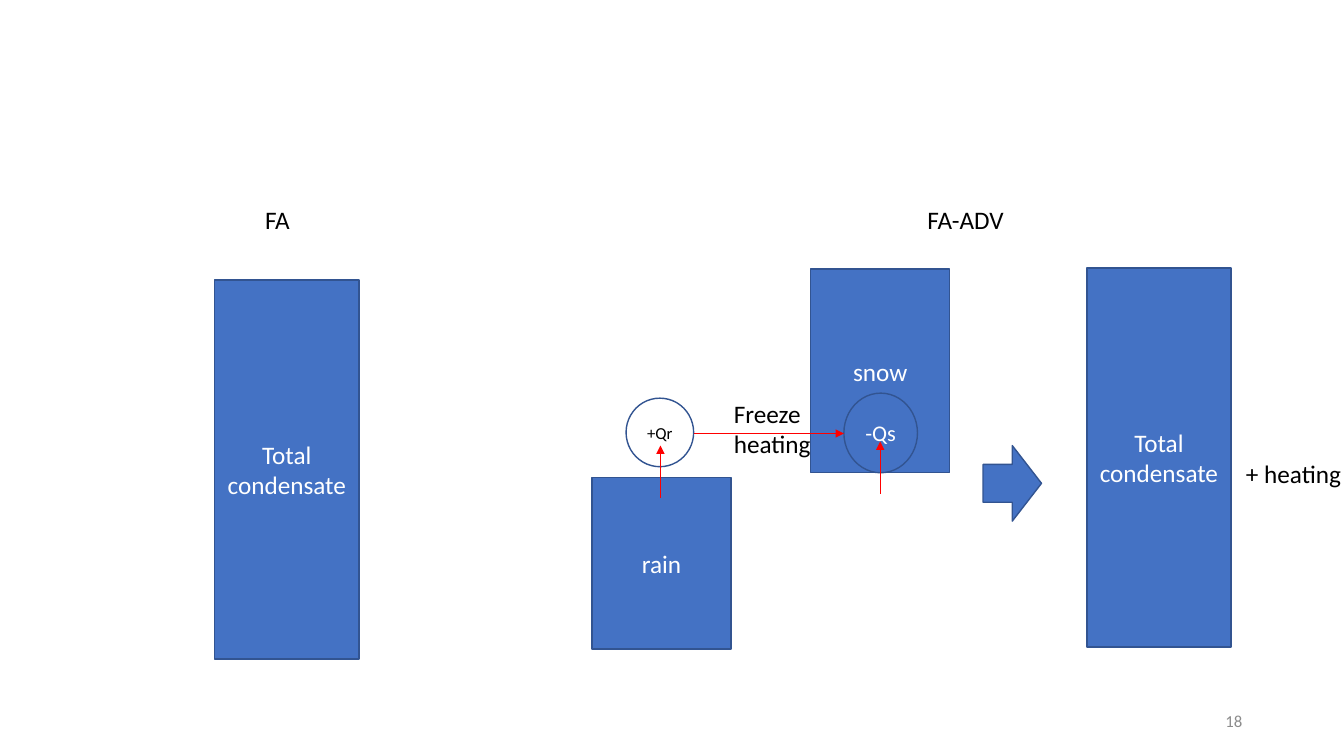
"""Build the slide comparing the FA and FA-ADV condensate schemes."""
from dataclasses import dataclass

from lxml import etree
from pptx import Presentation
from pptx.dml.color import RGBColor
from pptx.enum.shapes import MSO_CONNECTOR, MSO_SHAPE
from pptx.enum.text import MSO_ANCHOR, PP_ALIGN
from pptx.oxml.ns import qn
from pptx.slide import Slide
from pptx.text.text import TextFrame
from pptx.util import Pt

PX = 9144
SLIDE_WIDTH, SLIDE_HEIGHT = 1333, 750
FONT = "Calibri"
COLORS = {
    "block": "4472C4",
    "outline": "325491",
    "arrow": "FF0000",
    "white": "FFFFFF",
    "black": "000000",
    "grey": "8C8C8C",
}
RECTANGLE = MSO_SHAPE.RECTANGLE
OVAL = MSO_SHAPE.OVAL
RIGHT_ARROW = MSO_SHAPE.RIGHT_ARROW
STRAIGHT = MSO_CONNECTOR.STRAIGHT
LEFT, CENTER, RIGHT = PP_ALIGN.LEFT, PP_ALIGN.CENTER, PP_ALIGN.RIGHT
TOP, MIDDLE = MSO_ANCHOR.TOP, MSO_ANCHOR.MIDDLE


@dataclass(frozen=True)
class Block:
    """An outlined shape with centred text."""

    kind: MSO_SHAPE
    left: int
    top: int
    width: int
    height: int
    text: str = ""
    size: int = 18
    color: str = "white"
    fill: str | None = "block"


@dataclass(frozen=True)
class Arrow:
    """A thin arrow between two points."""

    start_x: int
    start_y: int
    end_x: int
    end_y: int


@dataclass(frozen=True)
class Label:
    """Free-standing text."""

    left: int
    top: int
    width: int
    height: int
    text: str
    size: int = 18
    color: str = "black"
    align: PP_ALIGN = LEFT
    anchor: MSO_ANCHOR = TOP
    wrap: bool = False


BLOCKS = [
    Block(RECTANGLE, 213, 278, 143, 376, "Total condensate"),
    Block(RECTANGLE, 587, 474, 138, 170, "rain"),
    Block(RECTANGLE, 804, 267, 138, 202, "snow"),
    Block(OVAL, 621, 395, 67, 68, "+Qr", 12, "black", None),
    Block(OVAL, 837, 390, 73, 79, "-Qs", 16),
    Block(RECTANGLE, 1078, 266, 143, 376, "Total condensate"),
    Block(RIGHT_ARROW, 975, 442, 58, 75),
]
ARROWS = [
    Arrow(655, 494, 655, 442),
    Arrow(873, 490, 873, 438),
    Arrow(688, 430, 837, 430),
]
LABELS = [
    Label(253, 198, 62, 40, "FA", wrap=True),
    Label(910, 198, 97, 40, "FA-ADV"),
    Label(718, 390, 97, 71, "Freeze\nheating"),
    Label(1226, 450, 116, 40, "+ heating"),
    Label(942, 695, 300, 40, "18", 12, "grey", RIGHT, MIDDLE, True),
]


def rgb(name: str) -> RGBColor:
    """Look up a named colour."""
    return RGBColor.from_string(COLORS[name])


def write_text(frame: TextFrame, item: Block | Label, align: PP_ALIGN) -> None:
    """Write the text of an item and format its runs."""
    frame.text = item.text
    for paragraph in frame.paragraphs:
        paragraph.alignment = align
        for run in paragraph.runs:
            run.font.name = FONT
            run.font.size = Pt(item.size)
            run.font.color.rgb = rgb(item.color)


def draw_block(slide: Slide, block: Block) -> None:
    """Draw an outlined shape."""
    box = (block.left, block.top, block.width, block.height)
    shape = slide.shapes.add_shape(block.kind, *(length * PX for length in box))
    shape.shadow.inherit = False
    if block.fill:
        shape.fill.solid()
        shape.fill.fore_color.rgb = rgb(block.fill)
    else:
        shape.fill.background()
    shape.line.color.rgb = rgb("outline")
    shape.line.width = Pt(1)
    frame = shape.text_frame
    frame.word_wrap = True
    frame.vertical_anchor = MIDDLE
    if block.kind == OVAL:
        frame.margin_left = frame.margin_right = 0
    write_text(frame, block, CENTER)


def draw_arrow(slide: Slide, arrow: Arrow) -> None:
    """Draw a red arrow with a triangular head at its end."""
    points = (arrow.start_x, arrow.start_y, arrow.end_x, arrow.end_y)
    connector = slide.shapes.add_connector(STRAIGHT, *(point * PX for point in points))
    connector.line.color.rgb = rgb("arrow")
    connector.line.width = Pt(0.5)
    properties = connector.element.spPr
    etree.SubElement(properties.find(qn("a:ln")), qn("a:tailEnd"), type="triangle")
    etree.SubElement(properties, qn("a:effectLst"))


def draw_label(slide: Slide, label: Label) -> None:
    """Draw a text box."""
    box = (label.left, label.top, label.width, label.height)
    shape = slide.shapes.add_textbox(*(length * PX for length in box))
    frame = shape.text_frame
    frame.word_wrap = label.wrap
    frame.vertical_anchor = label.anchor
    write_text(frame, label, label.align)


def main() -> None:
    """Create the presentation and save it."""
    presentation = Presentation()
    presentation.slide_width = SLIDE_WIDTH * PX
    presentation.slide_height = SLIDE_HEIGHT * PX
    slide = presentation.slides.add_slide(presentation.slide_layouts[6])
    for block in BLOCKS:
        draw_block(slide, block)
    for arrow in ARROWS:
        draw_arrow(slide, arrow)
    for label in LABELS:
        draw_label(slide, label)
    presentation.save("out.pptx")


if __name__ == "__main__":
    main()
